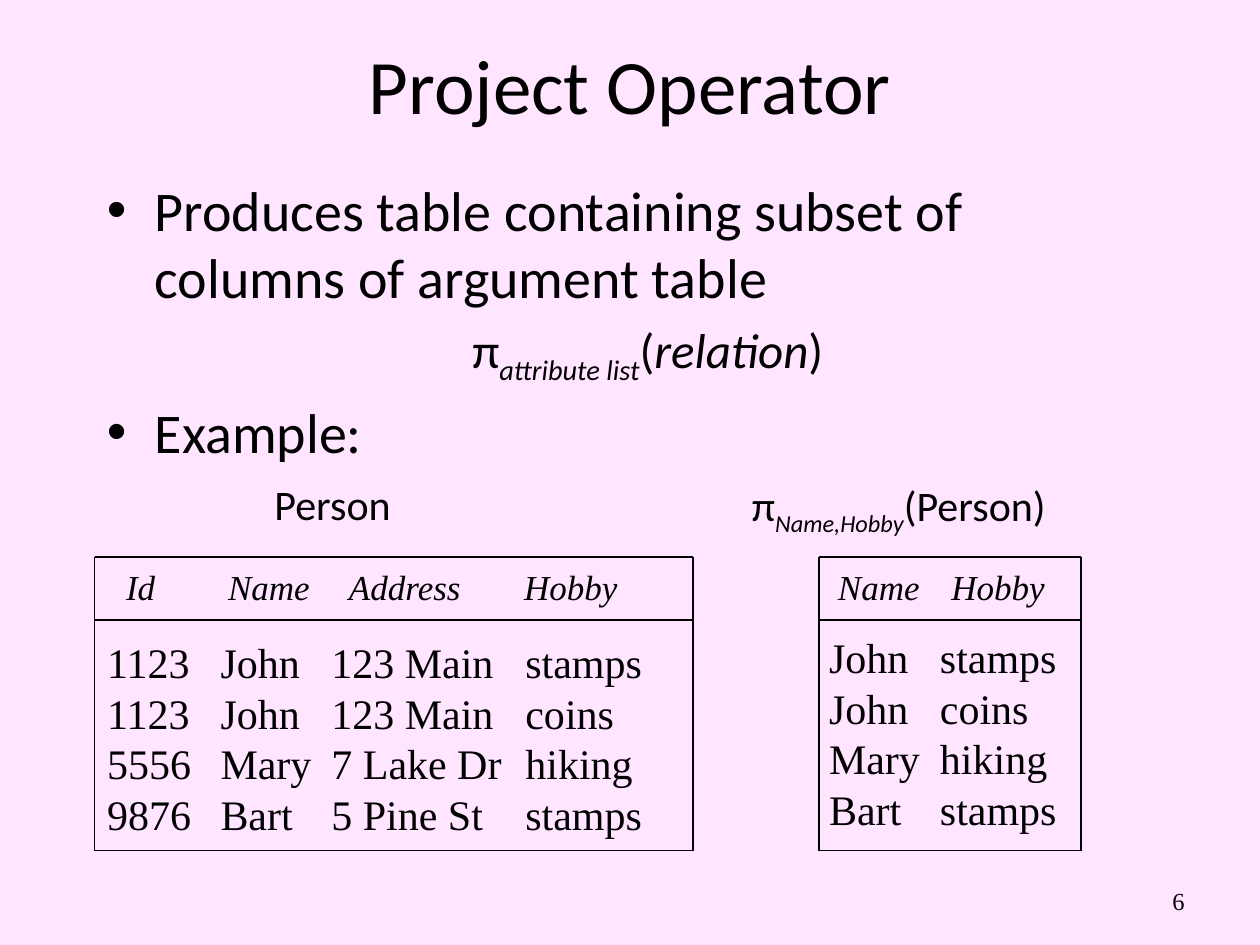
"""Build the Project Operator slide with its source and result tables."""
from lxml import etree
from pptx import Presentation
from pptx.dml.color import RGBColor
from pptx.enum import shapes, text
from pptx.oxml import ns
from pptx.util import Inches, Pt


def style(run, size, face="Calibri", italic=False, hue="000000"):
    font = run.font
    font.size, font.name, font.italic = Pt(size), face, italic
    font.color.rgb = RGBColor.from_string(hue)


def add(parent, tag, spot=None, **attrs):
    node = etree.Element(ns.qn(tag), {k: str(v) for k, v in attrs.items()})
    parent.insert(len(parent) if spot is None else spot, node)
    return node


SERIF = "Times New Roman"
deck = Presentation()
deck.slide_width, deck.slide_height = Inches(10), Inches(7.5)
slide = deck.slides.add_slide(deck.slide_layouts[5])
slide.background.fill.solid()
slide.background.fill.fore_color.rgb = RGBColor.from_string("FFE5FF")

title = slide.shapes.title
title.left, title.top = Inches(0.75), Inches(0.25)
title.width, title.height = Inches(8.5), Inches(0.83)
title.text_frame.text = "Project Operator"
title.text_frame.vertical_anchor = text.MSO_ANCHOR.MIDDLE
head = title.text_frame.paragraphs[0]
head.alignment = text.PP_ALIGN.CENTER
style(head.runs[0], 44)

# Each line: size, left margin, first indent, line spacing, (text, kind) runs
lines = [
    (32, 0.38, -0.38, 1.0,
     [("Produces table containing subset of columns of argument table", "")]),
    (28, 0, 2.9, 1.0,
     [("π", ""), ("attribute list", "sub"), ("(", ""),
      ("relation", "italic"), (")", "")]),
    (32, 0.38, -0.38, 1.0, [("Example:", "")]),
    (24, 0, 1.33, 1.1, [("Person", "")]),
]
label = [(24, 0, 0, 1.0, [("π", ""), ("Name,Hobby", "sub"), ("(Person)", "")])]
blocks = [(0.75, 1.34, 8.5, 3.05, lines), (5.87, 3.76, 2.6, 0.5, label)]
for left, top, width, height, paras in blocks:
    box = slide.shapes.add_textbox(
        Inches(left), Inches(top), Inches(width), Inches(height))
    frame = box.text_frame
    frame.word_wrap = True
    for i, (size, margin, first, spacing, parts) in enumerate(paras):
        para = frame.paragraphs[0] if i == 0 else frame.add_paragraph()
        para.line_spacing = spacing
        para.space_before = Pt(size * 0.2 if len(paras) > 1 else 0)
        for words, kind in parts:
            run = para.add_run()
            run.text = words
            style(run, size, italic=bool(kind))
            if kind == "sub":
                run.font._element.set("baseline", "-25000")
        props = para._p.get_or_add_pPr()
        props.set("marL", str(Inches(margin)))
        props.set("indent", str(Inches(first)))
        if first < 0:
            add(props, "a:buFont", typeface="Arial")
            add(props, "a:buChar", char="•")
        else:
            add(props, "a:buNone")

people = [
    ("Id", "Name", "Address", "Hobby"),
    ("1123", "John", "123 Main", "stamps"),
    ("1123", "John", "123 Main", "coins"),
    ("5556", "Mary", "7 Lake Dr", "hiking"),
    ("9876", "Bart", "5 Pine St", "stamps"),
]
hobbies = [(row[1], row[3]) for row in people]
top, rule, base = 4.42, 4.92, 6.75
# Each table: left edge, rows, column widths, header insets, inset, gap above data
tables = [
    (0.75, people, [0.9, 0.88, 1.54, 1.43], [0.25, 0.16, 0.24, 0.09], 0.1, 0.17),
    (6.5, hobbies, [0.88, 1.2], [0.15, 0.17], 0.08, 0.13),
]
for left, rows, widths, insets, inset, gap in tables:
    right = left + sum(widths)
    highs = [rule - top, 0.4 + gap, 0.4, 0.4, base - rule - 1.2 - gap]
    grid = slide.shapes.add_table(
        len(rows), len(widths), Inches(left), Inches(top),
        Inches(right - left), Inches(base - top)).table
    grid.horz_banding = False
    for col, width in zip(grid.columns, widths):
        col.width = Inches(width)
    for r, row in enumerate(rows):
        grid.rows[r].height = Inches(highs[r])
        for c, words in enumerate(row):
            cell = grid.cell(r, c)
            cell.text_frame.text = words
            cell.text_frame.word_wrap = False
            cell.margin_left = Inches(inset if r else insets[c])
            cell.margin_top = Inches(gap if r == 1 else 0)
            cell.margin_right = cell.margin_bottom = 0
            cell.vertical_anchor = (
                text.MSO_ANCHOR.TOP if r else text.MSO_ANCHOR.MIDDLE)
            run = cell.text_frame.paragraphs[0].runs[0]
            style(run, 24 if r else 20, SERIF, italic=r == 0)
            run.font.bold = False
            cell.fill.background()
            props = cell._tc.get_or_add_tcPr()
            for spot, side in enumerate("LRTB"):
                add(add(props, f"a:ln{side}", spot), "a:noFill")

    rules = [(left, y, right, y) for y in (top, rule, base)]
    rules += [(x, y, x, end) for x in (left, right)
              for y, end in ((top, rule), (rule, base))]
    for ends in rules:
        line = slide.shapes.add_connector(
            shapes.MSO_CONNECTOR.STRAIGHT, *[Inches(v) for v in ends])
        line.line.width = Pt(0.75)
        line.line.color.rgb = RGBColor.from_string("000000")
        add(line._element.spPr, "a:effectLst")

page = slide.shapes.add_textbox(Inches(7.17), Inches(6.95), Inches(2.33), Inches(0.4))
page.text_frame.word_wrap = True
page.text_frame.text = "6"
page.text_frame.vertical_anchor = text.MSO_ANCHOR.MIDDLE
foot = page.text_frame.paragraphs[0]
foot.alignment = text.PP_ALIGN.RIGHT
style(foot.runs[0], 14, SERIF)

deck.save("out.pptx")
